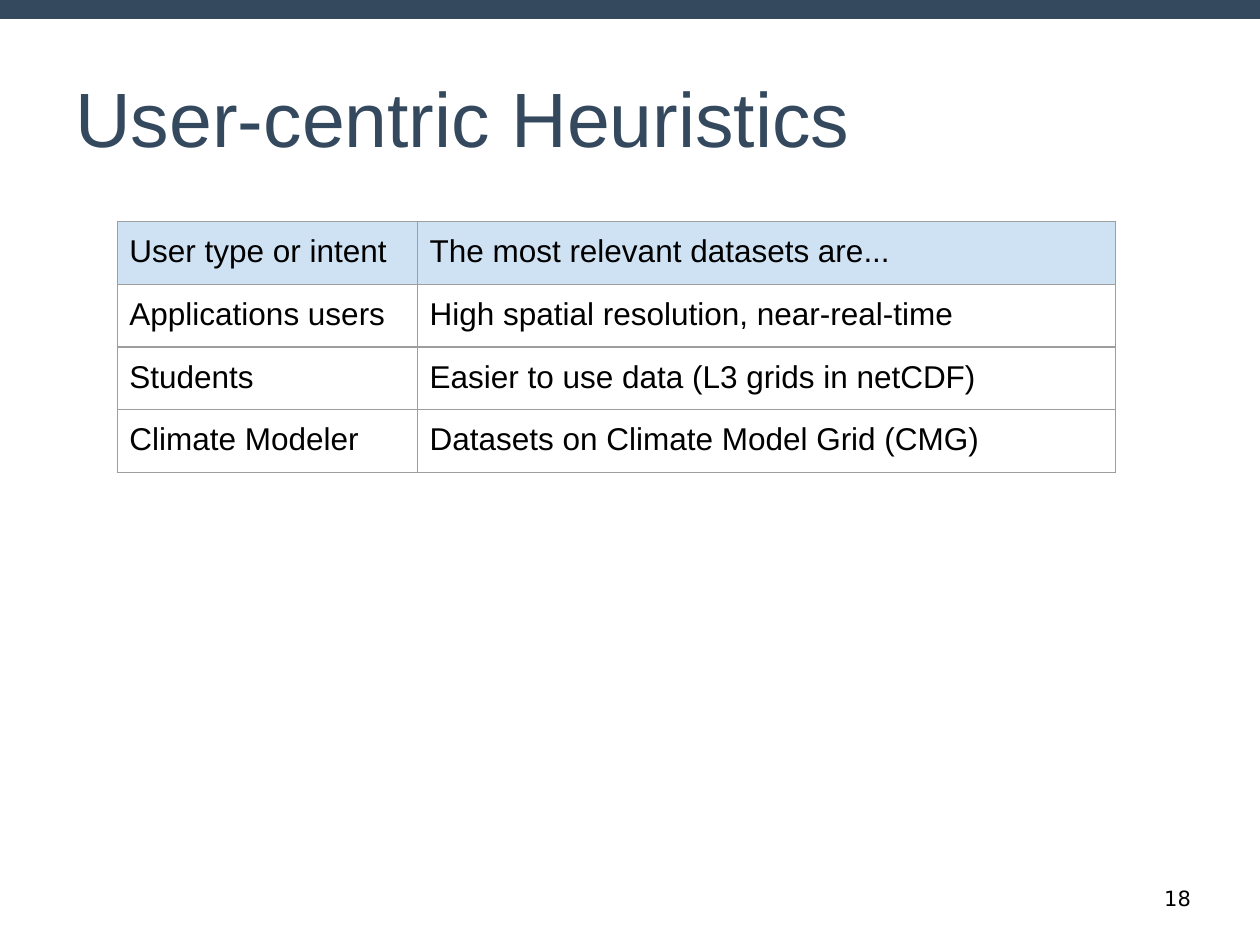
from lxml.etree import SubElement
from pptx import Presentation
from pptx.dml.color import RGBColor
from pptx.enum.shapes import MSO_SHAPE as Shape
from pptx.enum.text import MSO_ANCHOR as Anchor, PP_ALIGN as Align
from pptx.oxml.ns import qn
from pptx.util import Cm, Pt

COLORS = {"navy": "34495E", "header": "CFE2F3", "border": "9E9E9E", "text": "000000"}
HEURISTICS = [
    ("User type or intent", "The most relevant datasets are..."),
    ("Applications users", "High spatial resolution, near-real-time"),
    ("Students", "Easier to use data (L3 grids in netCDF)"),
    ("Climate Modeler", "Datasets on Climate Model Grid (CMG)"),
]
COLUMN_WIDTHS = [Cm(6.05), Cm(14.07)]
ROW_HEIGHT = Cm(1.07)
PADDING = Cm(0.25)


def color(name):
    return RGBColor.from_string(COLORS[name])


def style_paragraph(paragraph, size, color_name, font_name="Arial"):
    paragraph.alignment = Align.LEFT
    paragraph.font.name = font_name
    paragraph.font.size = Pt(size)
    paragraph.font.bold = False
    paragraph.font.color.rgb = color(color_name)


def set_padding(target):
    """Give a text frame or a table cell equal margins on all sides."""
    target.margin_left = target.margin_right = PADDING
    target.margin_top = target.margin_bottom = PADDING


def add_top_bar(slide, width):
    bar = slide.shapes.add_shape(Shape.RECTANGLE, 0, 0, width, Cm(0.38))
    bar.shadow.inherit = False
    bar.fill.solid()
    bar.fill.fore_color.rgb = color("navy")
    bar.line.fill.background()


def add_title(slide, text):
    title = slide.shapes.title
    title.left, title.top, title.width, title.height = Cm(1.27), Cm(0.76), Cm(22.86), Cm(3.18)
    frame = title.text_frame
    frame.text = text
    frame.vertical_anchor = Anchor.MIDDLE
    set_padding(frame)
    style_paragraph(frame.paragraphs[0], 44, "navy")


def add_slide_number(slide, text):
    box = slide.shapes.add_textbox(Cm(23.22), Cm(17.73), Cm(1.47), Cm(0.76))
    box.text_frame.word_wrap = True
    box.text_frame.text = text
    style_paragraph(box.text_frame.paragraphs[0], 12, "text", "DejaVu Sans")


def add_borders(cell):
    properties = cell._tc.get_or_add_tcPr()
    for side in ("lnL", "lnR", "lnT", "lnB"):
        line = SubElement(properties, qn(f"a:{side}"), w=str(Pt(0.75)))
        fill = SubElement(line, qn("a:solidFill"))
        SubElement(fill, qn("a:srgbClr"), val=COLORS["border"])


def format_cell(cell, text, is_header):
    cell.text = text
    set_padding(cell)
    style_paragraph(cell.text_frame.paragraphs[0], 18, "text")
    add_borders(cell)
    if is_header:
        cell.fill.solid()
        cell.fill.fore_color.rgb = color("header")
    else:
        cell.fill.background()


def add_heuristics_table(slide, rows):
    table = slide.shapes.add_table(
        len(rows), len(COLUMN_WIDTHS), Cm(2.36), Cm(4.47),
        sum(COLUMN_WIDTHS), ROW_HEIGHT * len(rows),
    ).table
    table.horz_banding = False
    table.first_row = False
    for column, width in zip(table.columns, COLUMN_WIDTHS):
        column.width = width
    for row_index, texts in enumerate(rows):
        table.rows[row_index].height = ROW_HEIGHT
        for column_index, text in enumerate(texts):
            format_cell(table.cell(row_index, column_index), text, row_index == 0)


def main():
    presentation = Presentation()
    presentation.slide_width, presentation.slide_height = Cm(25.4), Cm(19.05)
    slide = presentation.slides.add_slide(presentation.slide_layouts[5])

    # Frame of the slide
    add_top_bar(slide, presentation.slide_width)
    add_slide_number(slide, "18")

    # Content
    add_title(slide, "User-centric Heuristics")
    add_heuristics_table(slide, HEURISTICS)

    presentation.save("out.pptx")


if __name__ == "__main__":
    main()
